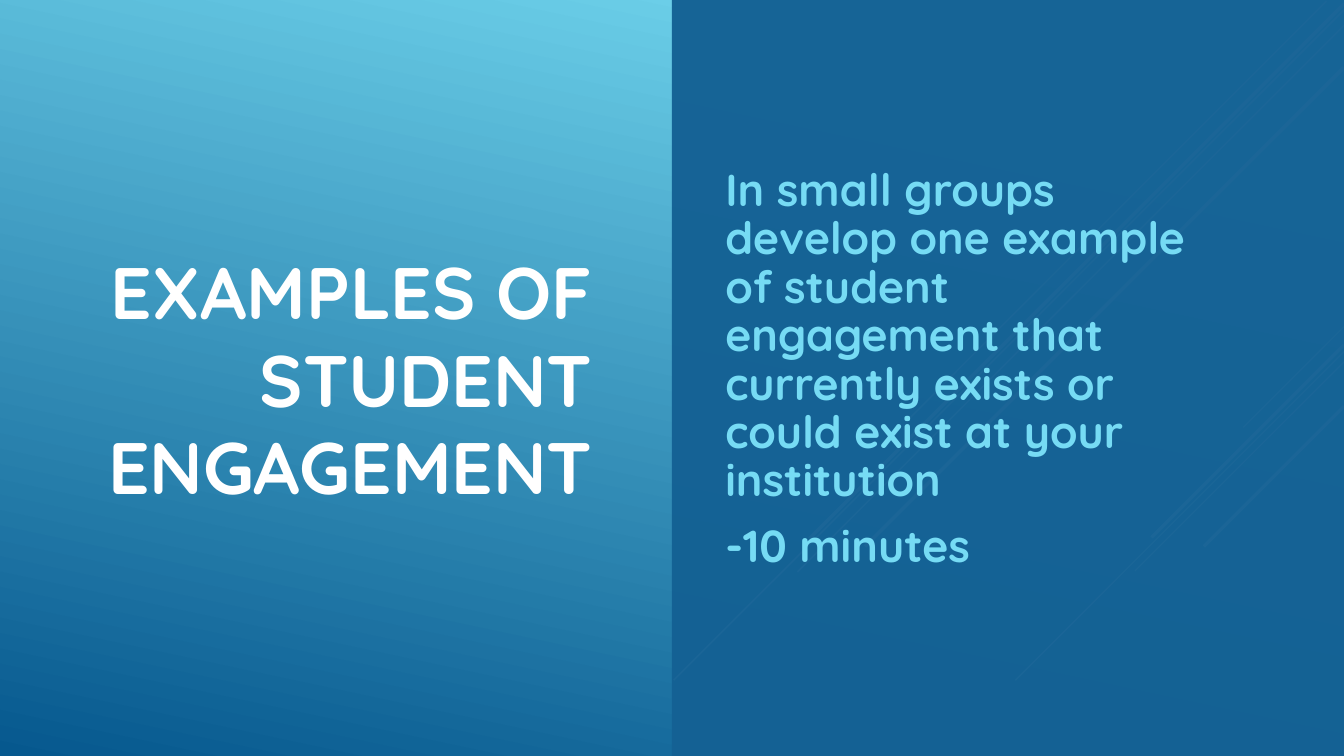
from dataclasses import dataclass

from lxml import etree
from pptx import Presentation
from pptx import util as u
from pptx.dml import color
from pptx.enum import shapes, text
from pptx.oxml import ns

Cm, Pt = u.Cm, u.Pt
WIDE, HIGH = 33.87, 19.05
HALF = WIDE / 2


@dataclass(frozen=True)
class Theme:
    face: str = "Quicksand"
    sky: str = "6ED2EB"
    deep: str = "06588E"
    panel: str = "146194"
    white: str = "FFFFFF"
    aqua: str = "76DBF4"
    title: float = 52
    body: float = 32


THEME = Theme()

# right end x, top y, run (all fall at 45 degrees), line width
RAYS = [
    (WIDE, 8.23, 2.54, 0.75),
    (WIDE, 8.86, 8.28, 0.75),
    (WIDE, 9.12, 5.27, 0.75),
    (WIDE, 8.69, 4.85, 2.25),
    (WIDE, 10.24, 3.53, 2.25),
    (33.43, 0.03, 10.58, 1),
    (WIDE, 0.25, 16.89, 1),
    (WIDE, 0.64, 13.77, 1),
    (WIDE, 0.1, 13.47, 2.5),
    (WIDE, 1.7, 12.07, 2.5),
]


def rgb(code):
    return color.RGBColor.from_string(code)


def apply(item, form):
    for key, value in form.items():
        setattr(item, key, value)


def add_sky(slide):
    fill = slide.background.fill
    fill.gradient()
    fill.gradient_angle = 360 - 102
    stops = ((0.1, THEME.sky), (1, THEME.deep))
    for stop, (place, code) in zip(fill.gradient_stops, stops):
        stop.position = place
        stop.color.rgb = rgb(code)


def add_ray(slide, x, y, run, width):
    ray = slide.shapes.add_connector(
        shapes.MSO_CONNECTOR.STRAIGHT, Cm(x), Cm(y), Cm(x - run), Cm(y + run))
    ray.line.color.rgb = rgb(THEME.white)
    ray.line.width = Pt(width)
    etree.SubElement(ray._element.spPr, ns.qn("a:effectLst"))


def add_panel(slide, box, code, alpha):
    """Add a borderless rectangle whose opacity is alpha percent."""
    panel = slide.shapes.add_shape(shapes.MSO_SHAPE.RECTANGLE, *map(Cm, box))
    panel.shadow.inherit = False
    panel.fill.solid()
    panel.fill.fore_color.rgb = rgb(code)
    panel.line.fill.background()
    tint = panel._element.spPr.find(".//" + ns.qn("a:srgbClr"))
    etree.SubElement(tint, ns.qn("a:alpha"), val=str(alpha * 1000))


def add_text(slide, box, lines, size, code, form, inset=0.25):
    """Add bold, middle-anchored text, one paragraph for each line."""
    frame = slide.shapes.add_textbox(*map(Cm, box)).text_frame
    apply(frame, {"word_wrap": True, "margin_right": Cm(inset),
                  "vertical_anchor": text.MSO_ANCHOR.MIDDLE})
    frame.text = "\n".join(lines)
    for para in frame.paragraphs:
        apply(para, form)
        font = para.runs[0].font
        apply(font, {"name": THEME.face, "size": Pt(size), "bold": True})
        font.color.rgb = rgb(code)


def main():
    deck = Presentation()
    apply(deck, {"slide_width": Cm(WIDE), "slide_height": Cm(HIGH)})
    slide = deck.slides.add_slide(deck.slide_layouts[6])
    add_sky(slide)
    for ray in RAYS:
        add_ray(slide, *ray)
    add_panel(slide, (HALF, 0, HALF, HIGH), THEME.panel, 97)
    add_text(slide, (1.9, 1.78, 13.28, 15.49),
             ["EXAMPLES OF STUDENT ENGAGEMENT"], THEME.title, THEME.white,
             {"alignment": text.PP_ALIGN.RIGHT})
    add_text(slide, (18.03, 0.64, 13.39, 17.37),
             ["In small groups develop one example of student engagement "
              "that currently exists or could exist at your institution",
              "-10 minutes"], THEME.body, THEME.aqua,
             {"alignment": text.PP_ALIGN.LEFT, "line_spacing": 0.9,
              "space_before": Pt(0.2 * THEME.body), "space_after": Pt(6)},
             inset=0.9)
    deck.save("out.pptx")


if __name__ == "__main__":
    main()
